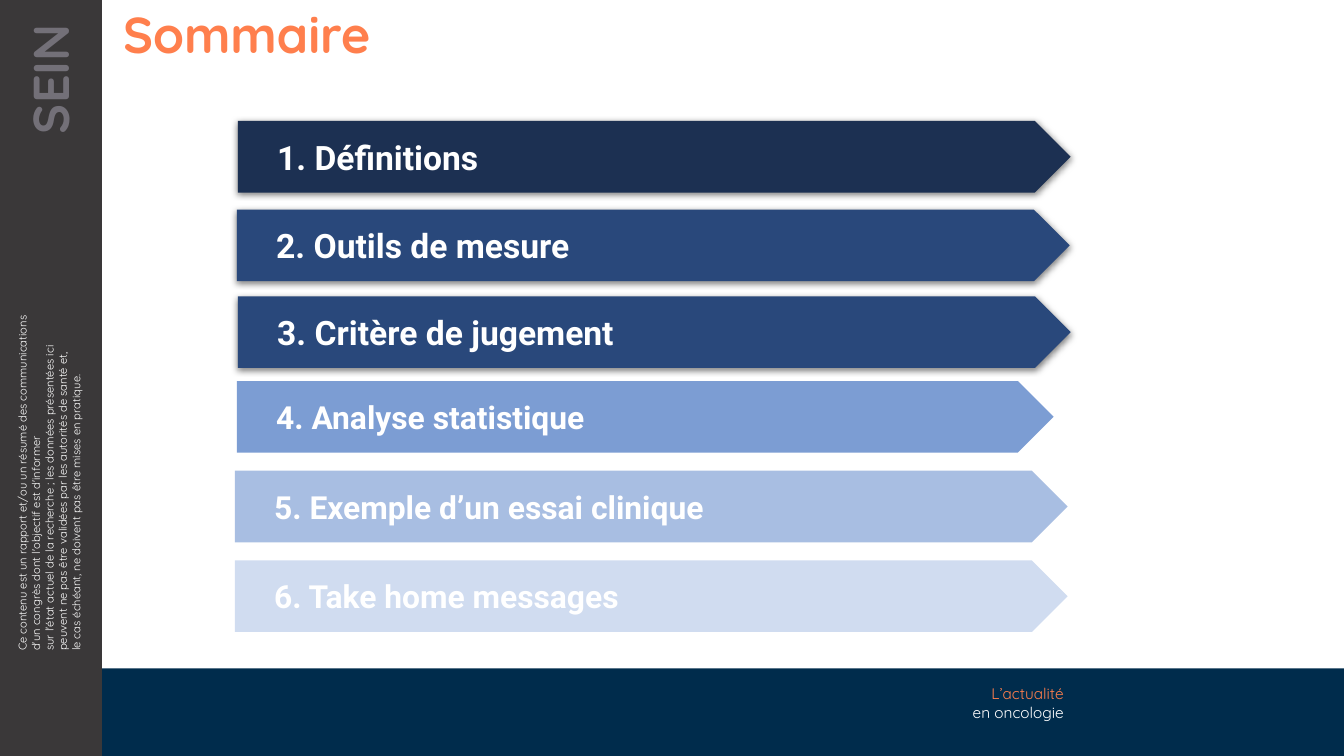
from collections import namedtuple

from lxml.etree import SubElement
from pptx import Presentation
from pptx.dml.color import RGBColor
from pptx.enum.shapes import MSO_SHAPE
from pptx.enum.text import MSO_ANCHOR, PP_ALIGN
from pptx.oxml.ns import qn
from pptx.util import Pt

PX = 9144  # 100 px to the inch

Box = namedtuple("Box", "left top width height")
Step = namedtuple("Step", "text left top width size fill raised")


class Theme:
    heading_font = "Quicksand"
    step_font = "Roboto"
    orange = "FF7F4D"
    white = "FFFFFF"
    rail = "3A3839"
    rail_label = "737078"
    footer = "002C4C"
    navy = "1C3052"
    blue = "29487B"
    sky = "7C9DD3"
    pale = "A8BEE2"
    mist = "D0DCF0"
    shadow = "000000"
    title_size = 36
    step_size = 24
    late_step_size = 22.7
    footer_size = 11
    notice_size = 8


STEPS = [
    Step("1. Définitions", 236, 120, 826, Theme.step_size, Theme.navy, True),
    Step("2. Outils de mesure", 235, 208, 826, Theme.step_size, Theme.blue, True),
    Step("3. Critère de jugement", 236, 294, 826, Theme.step_size, Theme.blue, True),
    Step("4. Analyse statistique", 235, 378, 810, Theme.late_step_size, Theme.sky, False),
    Step("5. Exemple d’un essai clinique", 233, 467, 826, Theme.late_step_size, Theme.pale, False),
    Step("6. Take home messages", 233, 556, 826, Theme.late_step_size, Theme.mist, False),
]
STEP_HEIGHT = 71

NOTICE = [
    "Ce contenu est un rapport et/ou un résumé des communications "
    "d'un congrès dont l'objectif est d'informer",
    "sur l'état actuel de la recherche ; les données présentées ici "
    "peuvent ne pas être validées par les autorités de santé et,",
    "le cas échéant, ne doivent pas être mises en pratique.",
]


def to_emu(box):
    return [length * PX for length in box]


def add_span(para, text, size, color, font=Theme.heading_font, bold=False):
    span = para.add_run()
    span.text = text
    span.font.size = Pt(size)
    span.font.name = font
    span.font.bold = bold
    span.font.color.rgb = RGBColor.from_string(color)


def set_insets(frame, left=10, top=5, right=10, bottom=5):
    frame.margin_left, frame.margin_top = left * PX, top * PX
    frame.margin_right, frame.margin_bottom = right * PX, bottom * PX


def add_text_box(page, box, align=PP_ALIGN.LEFT, rotation=0, **insets):
    """Add an empty wrapped text box; return its first paragraph."""
    text_box = page.shapes.add_textbox(*to_emu(box))
    text_box.rotation = rotation
    frame = text_box.text_frame
    frame.word_wrap = True
    set_insets(frame, **insets)
    para = frame.paragraphs[0]
    para.alignment = align
    return para


def add_panel(page, kind, box, fill):
    panel = page.shapes.add_shape(kind, *to_emu(box))
    panel.shadow.inherit = False
    panel.fill.solid()
    panel.fill.fore_color.rgb = RGBColor.from_string(fill)
    panel.line.fill.background()
    return panel


def add_drop_shadow(shape):
    effects = shape.element.spPr.find(qn("a:effectLst"))
    shadow = SubElement(effects, qn("a:outerShdw"), blurRad=str(Pt(4.5)),
                        dist=str(Pt(1.5)), dir="5400000", rotWithShape="0")
    color = SubElement(shadow, qn("a:srgbClr"), val=Theme.shadow)
    SubElement(color, qn("a:alpha"), val="50000")


def upright_box(rail, middle, length, thickness):
    """Box that is centred on the rail once it is turned by 270 degrees."""
    center = rail.left + rail.width // 2 - 1
    return Box(center - length // 2, rail.top + middle - thickness // 2, length, thickness)


def draw_rail(page, rail):
    add_panel(page, MSO_SHAPE.RECTANGLE, rail, Theme.rail)
    notice = add_text_box(page, upright_box(rail, 475, 360, 77), rotation=270)
    for number, line in enumerate(NOTICE):
        if number:
            notice.add_line_break()
        add_span(notice, line, Theme.notice_size, Theme.white)
    label = add_text_box(page, upright_box(rail, 153, 307, 71), PP_ALIGN.RIGHT, 270, right=24)
    add_span(label, "SEIN", Theme.title_size, Theme.rail_label, bold=True)


def draw_footer(page, footer):
    add_panel(page, MSO_SHAPE.RECTANGLE, footer, Theme.footer)
    tagline = Box(footer.left + 800, footer.top + 11, 164, 47)
    para = add_text_box(page, tagline, PP_ALIGN.RIGHT)
    add_span(para, "L’actualité", Theme.footer_size, Theme.orange)
    para.add_line_break()
    add_span(para, "en oncologie", Theme.footer_size, Theme.white)


def draw_title(page, box):
    para = add_text_box(page, box, left=20)
    para.line_spacing = 0.9
    add_span(para, "Sommaire", Theme.title_size, Theme.orange, bold=True)


def draw_step(page, step):
    box = Box(step.left, step.top, step.width, STEP_HEIGHT)
    arrow = add_panel(page, MSO_SHAPE.PENTAGON, box, step.fill)
    arrow.adjustments[0] = 0.5
    if step.raised:
        add_drop_shadow(arrow)
    frame = arrow.text_frame
    frame.word_wrap = True
    frame.vertical_anchor = MSO_ANCHOR.MIDDLE
    set_insets(frame, 13, 13, 13, 13)
    para = frame.paragraphs[0]
    para.alignment = PP_ALIGN.LEFT
    para._p.get_or_add_pPr().set("marL", str(26 * PX))
    add_span(para, step.text, step.size, Theme.white, Theme.step_font, bold=True)


def main():
    deck = Presentation()
    deck.slide_width, deck.slide_height = 1333 * PX, 750 * PX
    page = deck.slides.add_slide(deck.slide_layouts[6])
    draw_footer(page, Box(101, 663, 1232, 87))
    draw_rail(page, Box(0, 0, 101, 750))
    draw_title(page, Box(102, 5, 1231, 57))
    for step in STEPS:
        draw_step(page, step)
    deck.save("out.pptx")


if __name__ == "__main__":
    main()
